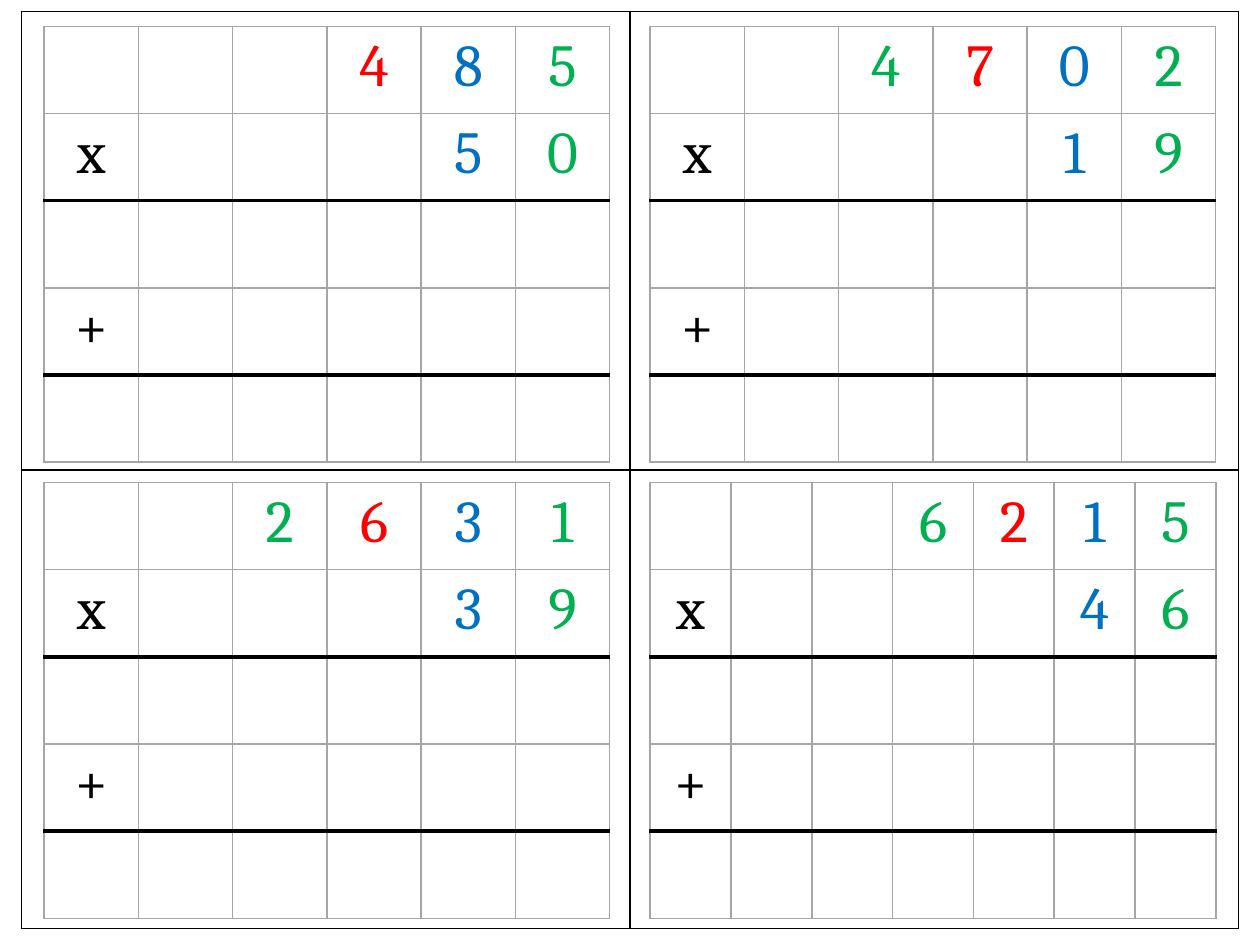
from dataclasses import dataclass

from lxml.etree import SubElement
from pptx import Presentation
from pptx.dml.color import RGBColor
from pptx.enum.text import MSO_ANCHOR, PP_ALIGN
from pptx.oxml.ns import qn
from pptx.table import Table, _Cell
from pptx.util import Inches, Pt

BLACK, GRAY, WHITE = "000000", "A6A6A6", "FFFFFF"
GREEN, BLUE, RED = "00B050", "0070C0", "FF0000"
PLACE_COLORS = (GREEN, BLUE, RED)  # ones, tens, hundreds, then again
THIN, THICK = 1, 2.25
GRID_WIDTH, GRID_HEIGHT, GRID_ROWS = 4.49, 3.46, 5
RULED_ROWS = (2, 4)  # rows with a heavy rule above them


@dataclass(frozen=True)
class Multiplication:
    left: float
    top: float
    columns: int
    factor: str
    multiplier: str


@dataclass(frozen=True)
class Border:
    color: str = GRAY
    width: float = THIN


PROBLEMS = (
    Multiplication(0.35, 0.21, 6, "485", "50"),
    Multiplication(5.16, 0.21, 6, "4702", "19"),
    Multiplication(0.35, 3.83, 6, "2631", "39"),
    Multiplication(5.16, 3.83, 7, "6215", "46"),
)


def rgb(color: str) -> RGBColor:
    return RGBColor.from_string(color)


def style_cell(cell: _Cell, side: Border, top: Border, bottom: Border) -> None:
    """Fill the cell white and draw its four borders."""
    cell.fill.solid()
    cell.fill.fore_color.rgb = rgb(WHITE)
    properties = cell._tc.get_or_add_tcPr()
    edges = (("a:lnL", side), ("a:lnR", side), ("a:lnT", top), ("a:lnB", bottom))
    for position, (tag, border) in enumerate(edges):
        line = SubElement(properties, qn(tag), w=str(int(Pt(border.width))))
        fill = SubElement(line, qn("a:solidFill"))
        SubElement(fill, qn("a:srgbClr"), val=border.color)
        properties.insert(position, line)  # borders precede the fill


def write_symbol(cell: _Cell, symbol: str, color: str) -> None:
    cell.vertical_anchor = MSO_ANCHOR.TOP
    para = cell.text_frame.paragraphs[0]
    para.alignment = PP_ALIGN.CENTER
    span = para.add_run()
    span.text = symbol
    span.font.name = "Cambria"
    span.font.size = Pt(34)
    span.font.color.rgb = rgb(color)


def write_number(table: Table, row: int, number: str) -> None:
    """Write digits from the right edge, coloured by place value."""
    last_column = len(table.columns) - 1
    for place, digit in enumerate(reversed(number)):
        color = PLACE_COLORS[place % len(PLACE_COLORS)]
        write_symbol(table.cell(row, last_column - place), digit, color)


def add_grid(slide, left: float, top: float, width: float, height: float,
             rows: int, columns: int) -> Table:
    """Add an unstyled table with equal rows and columns."""
    table = slide.shapes.add_table(
        rows, columns, Inches(left), Inches(top), Inches(width), Inches(height)
    ).table
    table.first_row = False
    table.horz_banding = False
    for column in table.columns:
        column.width = int(Inches(width) / columns)
    for row in table.rows:
        row.height = int(Inches(height) / rows)
    return table


def add_frame(slide) -> None:
    table = add_grid(slide, 0.17, 0.09, 9.66, 7.28, 2, 2)
    border = Border(BLACK)
    for cell in table.iter_cells():
        style_cell(cell, border, border, border)


def add_multiplication(slide, problem: Multiplication) -> None:
    table = add_grid(slide, problem.left, problem.top, GRID_WIDTH, GRID_HEIGHT,
                     GRID_ROWS, problem.columns)
    light, heavy = Border(), Border(BLACK, THICK)
    for index, row in enumerate(table.rows):
        top = heavy if index in RULED_ROWS else light
        bottom = heavy if index + 1 in RULED_ROWS else light
        for cell in row.cells:
            style_cell(cell, light, top, bottom)
    write_number(table, 0, problem.factor)
    write_number(table, 1, problem.multiplier)
    write_symbol(table.cell(1, 0), "x", BLACK)
    write_symbol(table.cell(3, 0), "+", BLACK)


def main() -> None:
    deck = Presentation()
    deck.slide_width, deck.slide_height = Inches(10), Inches(7.5)
    page = deck.slides.add_slide(deck.slide_layouts[6])
    add_frame(page)
    for problem in PROBLEMS:
        add_multiplication(page, problem)
    deck.save("out.pptx")


if __name__ == "__main__":
    main()
